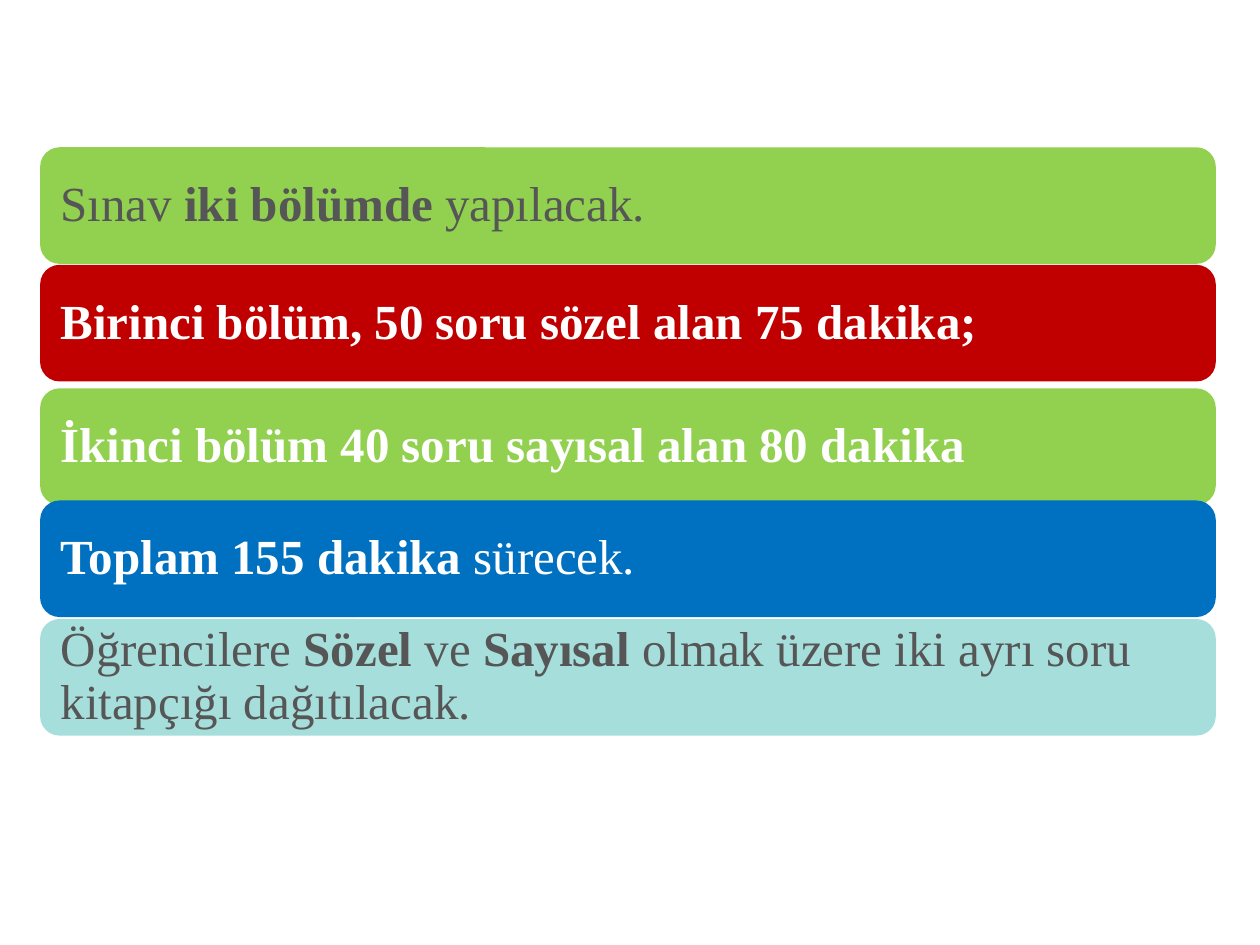
from dataclasses import dataclass

from pptx import Presentation
from pptx.dml.color import RGBColor
from pptx.enum.shapes import MSO_SHAPE
from pptx.enum.text import MSO_ANCHOR, PP_ALIGN
from pptx.slide import Slide
from pptx.util import Cm, Pt

ROUND = MSO_SHAPE.ROUNDED_RECTANGLE
MIDDLE = MSO_ANCHOR.MIDDLE
LEFT = PP_ALIGN.LEFT
FONT = "Times New Roman"
GREEN, RED, BLUE, AQUA = "92D050", "C00000", "0070C0", "A6DEDB"
GRAY, WHITE = "565656", "FFFFFF"


@dataclass(frozen=True)
class Run:
    text: str
    bold: bool = False


@dataclass(frozen=True)
class Bar:
    top: float
    fill: str
    ink: str
    runs: tuple[Run, ...]


BARS = (
    Bar(2.97, GREEN, GRAY, (
        Run("Sınav "), Run("iki bölümde ", True), Run("yapılacak."))),
    Bar(5.34, RED, WHITE, (
        Run("Birinci bölüm, 50 soru sözel alan 75 dakika;", True),)),
    Bar(7.83, GREEN, WHITE, (
        Run("İkinci bölüm 40 soru sayısal alan 80 dakika", True),)),
    Bar(10.09, BLUE, WHITE, (
        Run("Toplam 155 dakika ", True), Run("sürecek."))),
    Bar(12.48, AQUA, GRAY, (
        Run("Öğrencilere "), Run("Sözel", True), Run(" ve "),
        Run("Sayısal", True),
        Run(" olmak üzere iki ayrı soru kitapçığı dağıtılacak."))),
)


def color(code: str) -> RGBColor:
    return RGBColor.from_string(code)


def draw_bar(slide: Slide, bar: Bar) -> None:
    """Draw one rounded bar with its line of text."""
    shape = slide.shapes.add_shape(
        ROUND, Cm(0.81), Cm(bar.top), Cm(23.7), Cm(2.35))
    shape.shadow.inherit = False
    shape.fill.solid()
    shape.fill.fore_color.rgb = color(bar.fill)
    shape.line.fill.background()

    frame = shape.text_frame
    frame.word_wrap = True
    frame.vertical_anchor = MIDDLE
    frame.margin_left = frame.margin_right = Cm(0.3)
    frame.margin_top = frame.margin_bottom = Cm(0.3)

    para = frame.paragraphs[0]
    para.alignment = LEFT
    para.line_spacing = 0.9
    for part in bar.runs:
        run = para.add_run()
        run.text = part.text
        run.font.name = FONT
        run.font.size = Pt(28)
        run.font.bold = part.bold
        run.font.color.rgb = color(bar.ink)


def main() -> None:
    deck = Presentation()
    deck.slide_width, deck.slide_height = Cm(25.4), Cm(19.05)
    slide = deck.slides.add_slide(deck.slide_layouts[6])
    for bar in BARS:
        draw_bar(slide, bar)
    deck.save("out.pptx")


if __name__ == "__main__":
    main()
